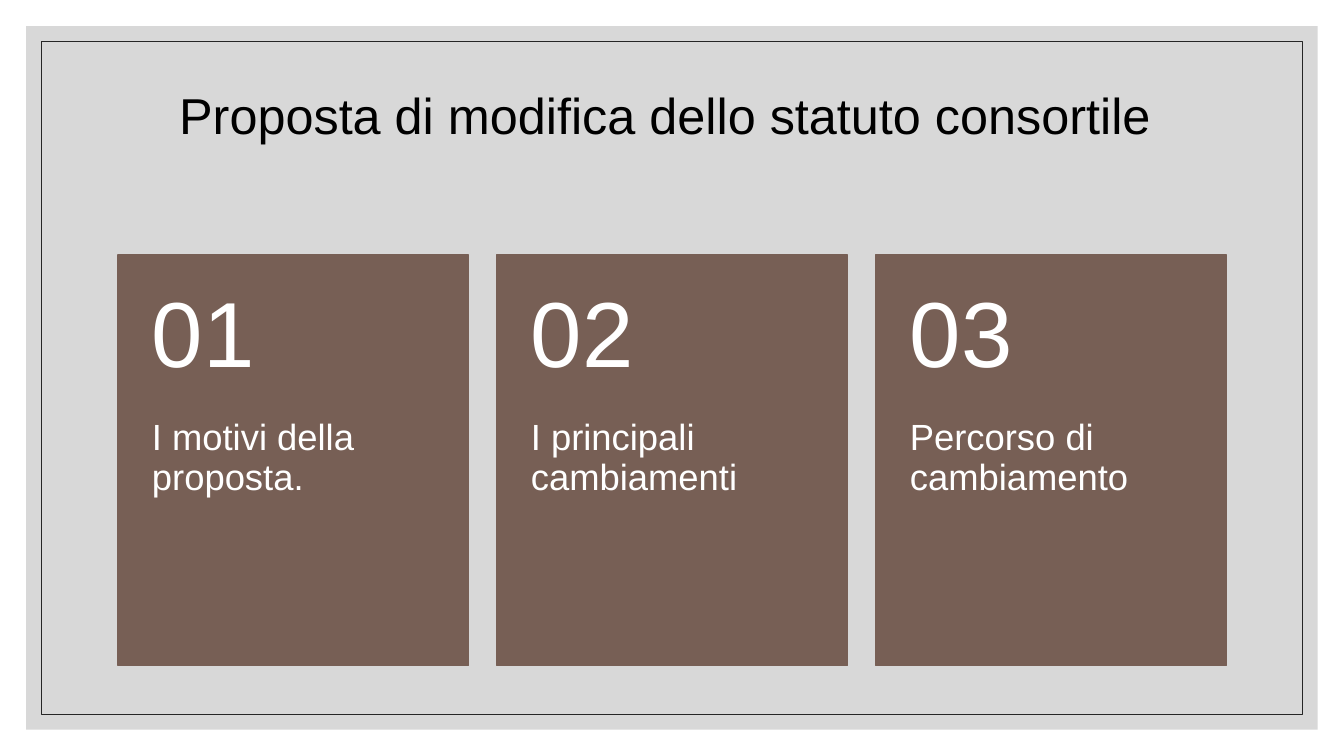
from dataclasses import dataclass

from lxml import etree
from pptx import Presentation
from pptx.dml.color import RGBColor
from pptx.enum.shapes import MSO_SHAPE
from pptx.enum.text import MSO_ANCHOR, PP_ALIGN
from pptx.oxml.ns import qn
from pptx.util import Cm, Pt

RECTANGLE = MSO_SHAPE.RECTANGLE
TOP, MIDDLE = MSO_ANCHOR.TOP, MSO_ANCHOR.MIDDLE
LEFT, CENTER = PP_ALIGN.LEFT, PP_ALIGN.CENTER
TITLE_ONLY_LAYOUT = 5


@dataclass(frozen=True)
class Theme:
    font: str = "Arial"
    panel: RGBColor = RGBColor(0xBF, 0xBF, 0xBF)
    panel_opacity: int = 60
    frame: RGBColor = RGBColor(0x26, 0x26, 0x26)
    card: RGBColor = RGBColor(0x77, 0x5F, 0x55)
    title: RGBColor = RGBColor(0, 0, 0)
    card_text: RGBColor = RGBColor(0xFF, 0xFF, 0xFF)
    title_size: int = 36
    number_size: int = 66
    label_size: int = 26


@dataclass(frozen=True)
class Box:
    """Position and size in centimetres."""
    left: float
    top: float
    width: float
    height: float

    def lengths(self):
        return Cm(self.left), Cm(self.top), Cm(self.width), Cm(self.height)


@dataclass(frozen=True)
class Card:
    number: str
    label: str


THEME = Theme()
SLIDE_WIDTH, SLIDE_HEIGHT = 33.87, 19.05
PANEL_MARGIN, FRAME_MARGIN = 0.66, 1.04
TITLE_BOX = Box(2.97, 1.78, 27.94, 2.39)
CARD_BOX = Box(2.97, 6.43, 8.84, 10.34)
CARD_STEP = 9.55
NUMBER_HEIGHT = 4.14
SIDE_INSET = 0.86
CARDS = (
    Card("01", "I motivi della proposta."),
    Card("02", "I principali cambiamenti"),
    Card("03", "Percorso di cambiamento"),
)


def inset_box(margin: float) -> Box:
    return Box(margin, margin, SLIDE_WIDTH - 2 * margin, SLIDE_HEIGHT - 2 * margin)


def add_rectangle(shapes, box: Box, *, fill=None, opacity: int = 100, line=None, line_width: float = 1):
    shape = shapes.add_shape(RECTANGLE, *box.lengths())
    shape.shadow.inherit = False
    if fill is None:
        shape.fill.background()
    else:
        shape.fill.solid()
        shape.fill.fore_color.rgb = fill
    if opacity < 100:
        color = shape.fill._xPr.find(".//" + qn("a:srgbClr"))
        etree.SubElement(color, qn("a:alpha"), val=str(opacity * 1000))
    if line is None:
        shape.line.fill.background()
    else:
        shape.line.color.rgb = line
        shape.line.width = Pt(line_width)
    return shape


def write_text(shape, text: str, *, size: int, color: RGBColor, anchor=TOP, align=LEFT,
               insets=(0.25, 0.13, 0.25, 0.13)) -> None:
    """Fill a shape with one paragraph; insets are left, top, right, bottom in cm."""
    frame = shape.text_frame
    frame.word_wrap = True
    frame.vertical_anchor = anchor
    frame.margin_left, frame.margin_top, frame.margin_right, frame.margin_bottom = map(Cm, insets)
    paragraph = frame.paragraphs[0]
    paragraph.alignment = align
    paragraph.line_spacing = 0.9
    paragraph.space_before = Pt(0)
    run = paragraph.add_run()
    run.text = text
    run.font.name = THEME.font
    run.font.size = Pt(size)
    run.font.color.rgb = color


def add_title(slide, text: str) -> None:
    title = slide.shapes.title
    title.left, title.top, title.width, title.height = TITLE_BOX.lengths()
    write_text(title, text, size=THEME.title_size, color=THEME.title, anchor=MIDDLE, align=CENTER)
    # Bring the title in front of the backdrop
    slide.shapes._spTree.append(title._element)


def add_card(slide, card: Card, box: Box) -> None:
    shapes = slide.shapes.add_group_shape().shapes
    add_rectangle(shapes, box, fill=THEME.card, line=THEME.card)
    label_box = Box(box.left, box.top + NUMBER_HEIGHT, box.width, box.height - NUMBER_HEIGHT)
    write_text(shapes.add_textbox(*label_box.lengths()), card.label, size=THEME.label_size,
               color=THEME.card_text, insets=(SIDE_INSET, 0, SIDE_INSET, 0.91))
    number_box = Box(box.left, box.top, box.width, NUMBER_HEIGHT)
    write_text(shapes.add_textbox(*number_box.lengths()), card.number, size=THEME.number_size,
               color=THEME.card_text, anchor=MIDDLE, insets=(SIDE_INSET, 0.46, SIDE_INSET, 0.46))


def main() -> None:
    presentation = Presentation()
    presentation.slide_width, presentation.slide_height = Cm(SLIDE_WIDTH), Cm(SLIDE_HEIGHT)
    slide = presentation.slides.add_slide(presentation.slide_layouts[TITLE_ONLY_LAYOUT])
    add_rectangle(slide.shapes, inset_box(PANEL_MARGIN), fill=THEME.panel, opacity=THEME.panel_opacity)
    add_rectangle(slide.shapes, inset_box(FRAME_MARGIN), line=THEME.frame, line_width=0.5)
    add_title(slide, "Proposta di modifica dello statuto consortile ")
    for index, card in enumerate(CARDS):
        left = CARD_BOX.left + index * CARD_STEP
        add_card(slide, card, Box(left, CARD_BOX.top, CARD_BOX.width, CARD_BOX.height))
    presentation.save("out.pptx")


if __name__ == "__main__":
    main()
